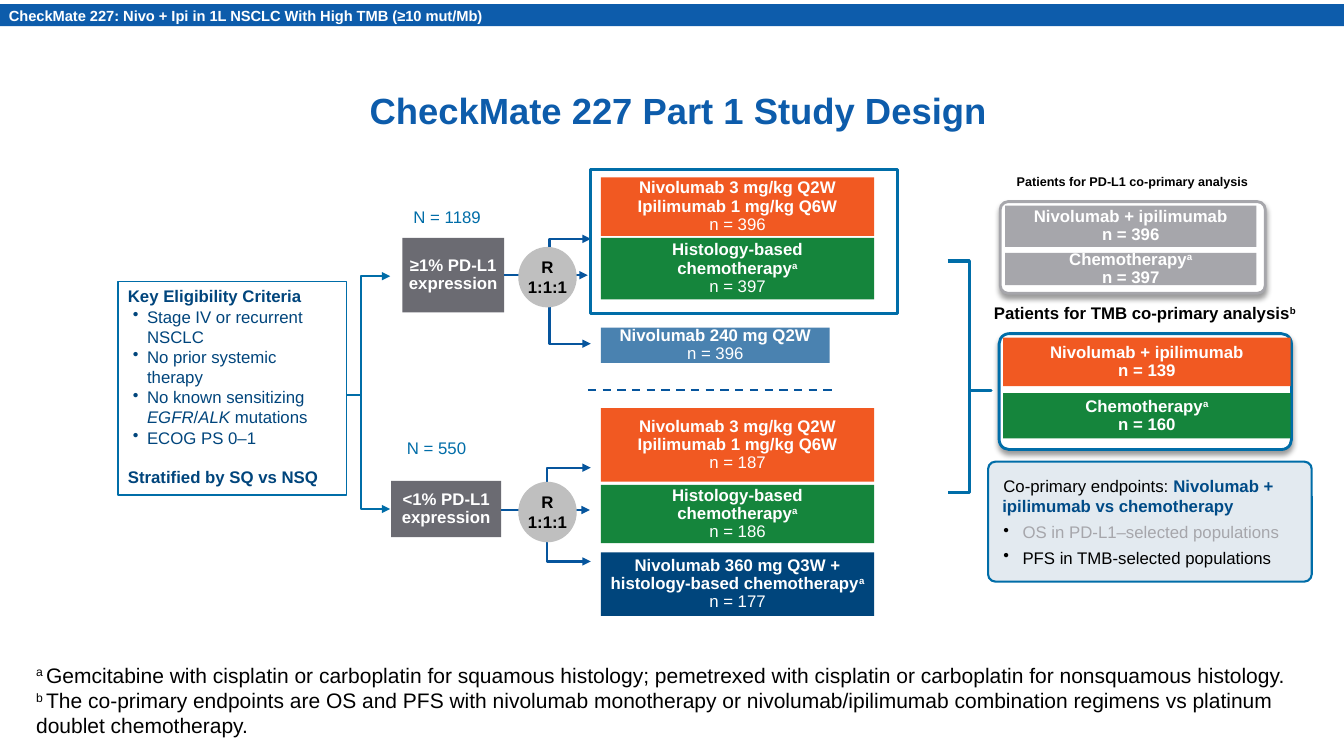
from lxml import etree
from pptx import Presentation
from pptx import util as u
from pptx.dml.color import RGBColor
from pptx.enum import dml, shapes, text
from pptx.oxml.ns import qn

HUE = {"bar": "0D5CAB", "line": "06559D", "edge": "006DA8", "navy": "00457C",
       "bold": "004B87", "orange": "F15922", "green": "15853C", "steel": "4A82B0",
       "slate": "6B6B72", "gray": "A6A6AB", "disc": "BFBFBF",
       "white": "FFFFFF", "black": "000000"}

# Text marks: "|" parts runs, "^" raises a run, "_" slants it, "*" makes it a bold accent
BAR = "CheckMate 227: Nivo + Ipi in 1L NSCLC With High TMB (≥10 mut/Mb)"
TITLE = "CheckMate 227 Part 1 Study Design"
DOUBLET = "Nivolumab 3 mg/kg Q2W\nIpilimumab 1 mg/kg Q6W"
CHEMO = "Histology-based chemotherapy|^a"
# Treatment arms: top, width, height, fill, name, count
ARMS = [(1.76, 2.71, 0.58, "orange", DOUBLET, 396),
        (2.36, 2.71, 0.61, "green", CHEMO, 397),
        (3.25, 2.27, 0.35, "steel", "Nivolumab 240 mg Q2W", 396),
        (4.05, 2.71, 0.73, "orange", DOUBLET, 187),
        (4.81, 2.71, 0.58, "green", CHEMO, 186),
        (5.48, 2.71, 0.63, "navy",
         "Nivolumab 360 mg Q3W +\nhistology-based chemotherapy|^a", 177)]
# Strata: label, label box, count, count box
STRATA = [("≥1% PD-L1\nexpression", (3.99, 2.36, 1.01, 0.74), "N = 1189", (3.99, 2, 0.89, 0.3)),
          ("<1% PD-L1\nexpression", (3.88, 4.77, 1.09, 0.56), "N = 550", (3.92, 4.29, 0.82, 0.3))]
# Randomisation: disc top, stem x, upper arm y, lower arm y, middle y, middle start and end x
SPLITS = [(2.45, 5.45, 2.37, 3.41, 2.73, 5, 5.83),
          (4.78, 5.43, 4.64, 5.57, 5.06, 4.97, 5.85)]
# Analysis sets: frame, edge, heading, heading box, heading size, rows
COHORTS = [((9.92, 2, 2.63, 0.91), "gray", "Patients for PD-L1 co-primary analysis",
            (9.53, 1.52, 3.4, 0.55), 9,
            [((9.97, 2.04, 2.49, 0.41), "gray", "Nivolumab + ipilimumab", 396),
             ((9.97, 2.51, 2.49, 0.32), "gray", "Chemotherapy|^a", 397)]),
           ((9.91, 3.31, 2.9, 1.15), "edge", "Patients for TMB co-primary analysis|^b",
            (9.7, 2.83, 3.31, 0.55), 12,
            [((9.95, 3.35, 2.85, 0.48), "orange", "Nivolumab + ipilimumab", 139),
             ((9.95, 3.9, 2.85, 0.45), "green", "Chemotherapy|^a", 160)])]
ITEM = dict(bullet="navy", left=0.19, hang=-0.14, bold=False)
CRITERIA = [("Key Eligibility Criteria", dict(bold=True)),
            ("Stage IV or recurrent NSCLC", ITEM),
            ("No prior systemic therapy", ITEM),
            ("No known sensitizing |_EGFR|/|_ALK| mutations", ITEM),
            ("ECOG PS 0–1", ITEM),
            ("Stratified by SQ vs NSQ", dict(bold=True, before=14))]
GOAL = dict(bullet="black", left=0.32, hang=-0.19, after=4)
GOALS = [("Co-primary endpoints: |*Nivolumab + ipilimumab vs chemotherapy",
          dict(left=0.12, hang=0.01, before=2, after=4.5)),
         ("OS in PD-L1–selected populations", dict(GOAL, col="gray")),
         ("PFS in TMB-selected populations", GOAL)]
NOTES = ["^a |Gemcitabine with cisplatin or carboplatin for squamous histology; "
         "pemetrexed with cisplatin or carboplatin for nonsquamous histology.",
         "^b |The co-primary endpoints are OS and PFS with nivolumab monotherapy or "
         "nivolumab/ipilimumab combination regimens vs platinum doublet chemotherapy."]

deck = Presentation()
deck.slide_width, deck.slide_height = u.Inches(13.33), u.Inches(7.5)
page = deck.slides.add_slide(deck.slide_layouts[6]).shapes
KIND = shapes.MSO_SHAPE
MID, LOW, TOP = text.MSO_ANCHOR.MIDDLE, text.MSO_ANCHOR.BOTTOM, text.MSO_ANCHOR.TOP


def rgb(name):
    return RGBColor.from_string(HUE[name])


def sub(node, tag, **attrs):
    return etree.SubElement(node, qn(tag), {k: str(v) for k, v in attrs.items()})


def write(shape, lines, size=12, col="white", bold=False, mid=True, anchor=MID,
          pad=(0.1, 0.05, 0.1, 0.05), wrap=True, gap=None):
    """Fill a shape with lines, each a string or a (string, options) pair."""
    frame = shape.text_frame
    frame.word_wrap, frame.vertical_anchor = wrap, anchor
    (frame.margin_left, frame.margin_top,
     frame.margin_right, frame.margin_bottom) = map(u.Inches, pad)
    for i, line in enumerate(lines):
        words, opt = (line, {}) if isinstance(line, str) else line
        par = frame.add_paragraph() if i else frame.paragraphs[0]
        par.alignment = text.PP_ALIGN.CENTER if mid else text.PP_ALIGN.LEFT
        props = par._p.get_or_add_pPr()
        if "left" in opt:
            props.set("marL", str(u.Inches(opt["left"])))
            props.set("indent", str(u.Inches(opt["hang"])))
        if "bullet" in opt:
            sub(sub(props, "a:buClr"), "a:srgbClr", val=HUE[opt["bullet"]])
            sub(props, "a:buChar", char="•")
        par.line_spacing = gap
        par.space_before = u.Pt(opt.get("before", 0))
        par.space_after = u.Pt(opt.get("after", 0))
        par.font.name, par.font.size = "Arial", u.Pt(size)
        par.font.bold = opt.get("bold", bold)
        par.font.color.rgb = rgb(opt.get("col", col))
        for part in words.split("|"):
            mark = part[0] if part[0] in "^_*" else ""
            for j, piece in enumerate(part[len(mark):].split("\n")):
                if j:
                    par.add_line_break()
                run = par.add_run()
                run.text = piece
                if mark == "^":
                    run.font._element.set("baseline", "30000")
                elif mark == "_":
                    run.font.italic = True
                elif mark == "*":
                    run.font.bold = True
                    run.font.color.rgb = rgb("bold")


def box(at, fill=None, edge=None, width=1, kind=KIND.RECTANGLE, adj=()):
    shape = page.add_shape(kind, *map(u.Inches, at))
    shape.shadow.inherit = False
    for i, part in enumerate(adj):
        shape.adjustments[i] = part
    if fill:
        shape.fill.solid()
        shape.fill.fore_color.rgb = rgb(fill)
    else:
        shape.fill.background()
    if edge:
        shape.line.color.rgb, shape.line.width = rgb(edge), u.Pt(width)
    else:
        shape.line.fill.background()
    return shape


def label(at, lines, **look):
    write(page.add_textbox(*map(u.Inches, at)), lines, **look)


def link(x1, y1, x2, y2, col="line", head=True, bent=False):
    kind = shapes.MSO_CONNECTOR.ELBOW if bent else shapes.MSO_CONNECTOR.STRAIGHT
    wire = page.add_connector(kind, *map(u.Inches, (x1, y1, x2, y2)))
    wire.line.color.rgb, wire.line.width = rgb(col), u.Pt(1.5)
    props = wire._element.spPr
    if bent:  # turn at the start: up or down first, then across
        sub(props.find(qn("a:prstGeom")).find(qn("a:avLst")), "a:gd", name="adj1", fmla="val 0")
    if head:
        sub(wire.line._get_or_add_ln(), "a:tailEnd", type="triangle")
    sub(props, "a:effectLst")
    return wire


# Header and title
write(box((-0.01, 0.04, 13.34, 0.22), "bar"), [BAR], size=10.5, bold=True, mid=False,
      pad=(0.1, 0.02, 0.05, 0.02))
label((2.04, 0.54, 9.38, 0.82), [TITLE], size=26, col="bar", bold=True, anchor=LOW,
      pad=(0.05,) * 4, gap=0.9)

# Endpoints
ends = box((9.8, 4.58, 3.21, 1.19), "navy", "edge", 1.5, KIND.ROUNDED_RECTANGLE, [0.061])
sub(ends._element.spPr.find(qn("a:solidFill"))[0], "a:alpha", val=11000)
write(ends, GOALS, col="black", mid=False, pad=(0,) * 4)

# Analysis sets
for at, edge, head, spot, size, rows in COHORTS:
    card = box(at, "white", edge, 2, KIND.ROUNDED_RECTANGLE, [0.087])
    glow = sub(card._element.spPr.find(qn("a:effectLst")), "a:outerShdw", blurRad=u.Pt(4),
               dist=u.Pt(3), dir=5400000, algn="t", rotWithShape=0)
    sub(sub(glow, "a:srgbClr", val=HUE["black"]), "a:alpha", val=40000)
    for place, fill, name, count in rows:
        write(box(place, fill), [name, f"n = {count}"], bold=True, gap=0.9)
    label(spot, [head], size=size, col="black", bold=True, pad=(0.06, 0.03, 0.06, 0.03))
box((9.4, 2.59, 0.43, 2.3), None, "edge", 2.25, KIND.RIGHT_BRACE, [0, 0.557])

# Eligibility and its branches
write(box((1.17, 2.79, 2.27, 2.12), "white", "edge"), CRITERIA, col="navy", mid=False, anchor=TOP)
link(3.44, 3.92, 3.58, 3.92, "edge", head=False)
for y in (2.74, 5.05):
    link(3.58, 3.92, 3.87, y, "edge", bent=True)

# Strata
for name, at, count, spot in STRATA:
    write(box(at, "slate"), [name], bold=True, pad=(0.05,) * 4, gap=0.9)
    label(spot, [count], col="edge", anchor=TOP)

# Randomisation
for top, x, high, low, y, start, end in SPLITS:
    for goal in (high, low):
        link(x, top + 0.3, 5.86, goal, bent=True)
    link(start, y, end, y)
    write(box((5.14, top, 0.58, 0.6), "disc", kind=KIND.OVAL), ["R", "1:1:1"], col="black",
          bold=True, pad=(0.01,) * 4, wrap=False)

# Treatment arms
for top, wide, tall, fill, name, count in ARMS:
    side = 0 if fill in ("steel", "navy") else 0.1
    write(box((5.96, top, wide, tall), fill), [name, (f"n = {count}", dict(bold=False))],
          bold=True, gap=0.9, pad=(side, 0.05, side, 0.05))
box((5.86, 1.68, 3.04, 1.43), None, "edge", 2.25)
link(5.83, 3.87, 8.31, 3.87, head=False).line.dash_style = dml.MSO_LINE.DASH

# Footnotes
label((0.26, 6.52, 13.03, 0.86), NOTES, size=15, col="black", mid=False, anchor=TOP)

deck.save("out.pptx")
